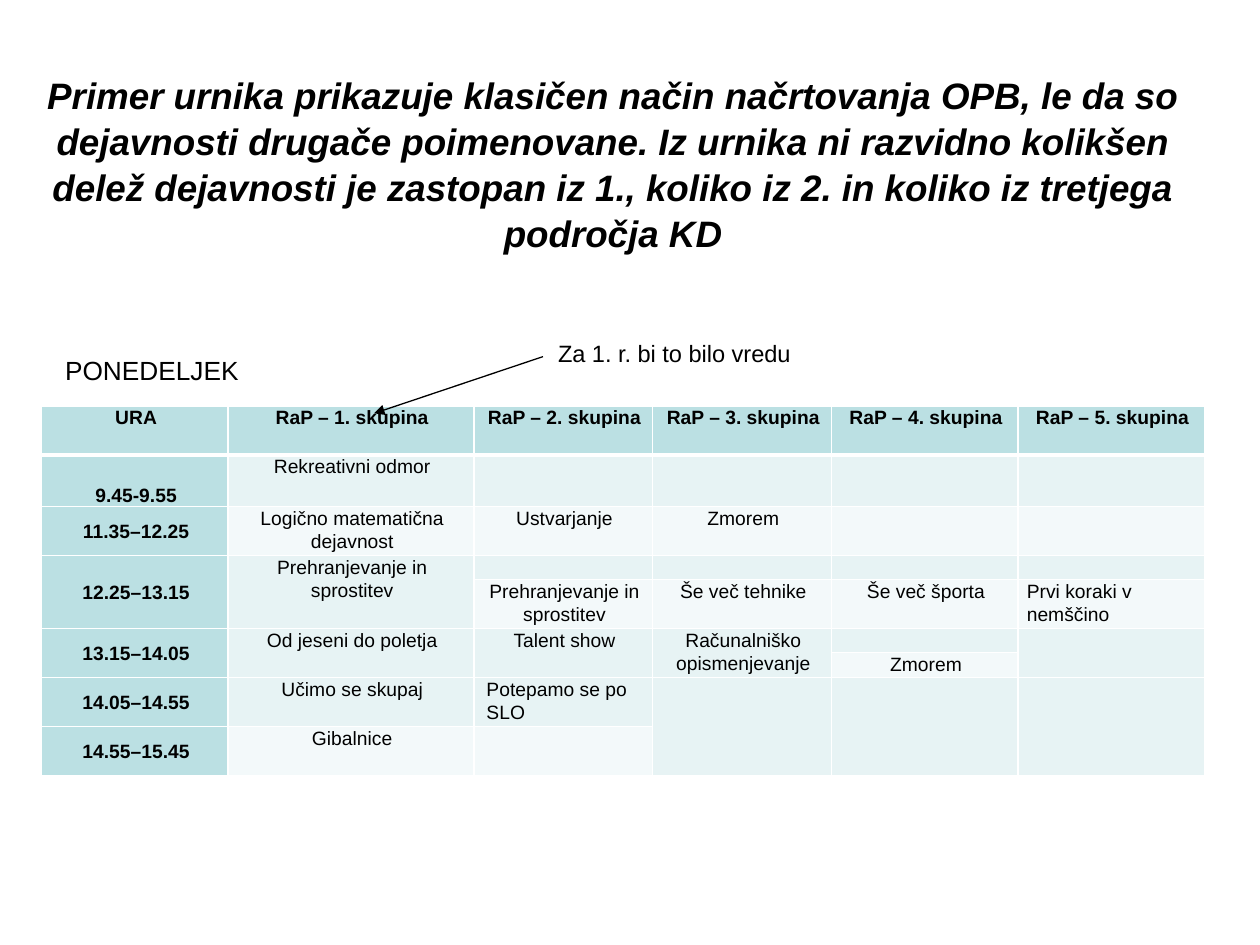
from typing import NamedTuple

import pptx
import pptx.dml.color
import pptx.enum.shapes
import pptx.enum.text
import pptx.oxml
import pptx.oxml.ns
import pptx.util
from lxml import etree

Pt = pptx.util.Pt
RGBColor = pptx.dml.color.RGBColor
Align = pptx.enum.text.PP_ALIGN
Anchor = pptx.enum.text.MSO_ANCHOR
qn = pptx.oxml.ns.qn

BLACK = RGBColor(0x00, 0x00, 0x00)
WHITE = RGBColor(0xFF, 0xFF, 0xFF)
HEADER = RGBColor(0xBB, 0xE0, 0xE3)
BANDS = (RGBColor(0xF3, 0xF9, 0xFA), RGBColor(0xE7, 0xF3, 0xF4))

CELL_SIZE = 11
COLUMNS = (106.6, 140.4, 102.2, 102.2, 106.6, 106.6)
ROWS = (28, 29.5, 28, 13.7, 28, 13.7, 14.4, 28, 28)
SCHEDULE = (
    ("URA", *(f"RaP – {n}. skupina" for n in range(1, 6))),
    ("9.45-9.55", "Rekreativni odmor", "", "", "", ""),
    ("11.35–12.25", "Logično matematična dejavnost", "Ustvarjanje", "Zmorem", "", ""),
    ("12.25–13.15", "Prehranjevanje in sprostitev", "", "", "", ""),
    ("", "", "Prehranjevanje in sprostitev", "Še več tehnike", "Še več športa",
     "Prvi koraki v nemščino"),
    ("13.15–14.05", "Od jeseni do poletja", "Talent show",
     "Računalniško opismenjevanje", "", ""),
    ("", "", "", "", "Zmorem", ""),
    ("14.05–14.55", "Učimo se skupaj", "Potepamo se po SLO", "", "", ""),
    ("14.55–15.45", "Gibalnice", "", "", "", ""),
)
# First row of each two-row merge, with the columns it covers
MERGES = {3: (0, 1), 5: (0, 1, 2, 3, 5), 7: (3, 4, 5)}
LEFT_ALIGNED = {(4, 5), (7, 2)}


class Label(NamedTuple):
    text: str
    left: float
    top: float
    width: float
    height: float
    size: float
    align: Align
    margin: float


LABELS = (
    Label("PONEDELJEK", 23.8, 198.7, 126, 23.8, 15, Align.CENTER, 5),
    Label("Za 1. r. bi to bilo vredu", 311.8, 190.1, 155.5, 23.8, 13.5, Align.LEFT, 7.2),
)


def set_all(target, values: dict) -> None:
    for name, value in values.items():
        setattr(target, name, value)


def write(tf, text: str, size: float, align: Align, bold=False, italic=False):
    p = tf.paragraphs[0]
    p.alignment = align
    r = p.add_run()
    r.text = text
    set_all(r.font, {"name": "Arial", "size": Pt(size), "bold": bold, "italic": italic})
    r.font.color.rgb = BLACK
    return p


def add_title(slide) -> None:
    sp = slide.shapes.title
    set_all(sp, {"left": Pt(13.7), "top": Pt(77), "width": Pt(673.2), "height": Pt(54.7)})
    tf = sp.text_frame
    set_all(tf, {"word_wrap": True, "auto_size": pptx.enum.text.MSO_AUTO_SIZE.NONE,
                 "vertical_anchor": Anchor.MIDDLE, "margin_bottom": Pt(26)})
    p = write(tf, "Primer urnika prikazuje klasičen način načrtovanja OPB, le da so "
              "dejavnosti drugače poimenovane. Iz urnika ni razvidno kolikšen delež "
              "dejavnosti je zastopan iz 1., koliko iz 2. in koliko iz tretjega "
              "področja KD", 21, Align.CENTER, bold=True, italic=True)
    p.line_spacing = 1.04


def add_label(slide, label: Label) -> None:
    sp = slide.shapes.add_textbox(Pt(label.left), Pt(label.top),
                                  Pt(label.width), Pt(label.height))
    tf = sp.text_frame
    set_all(tf, {"word_wrap": True, "margin_left": Pt(label.margin),
                 "margin_right": Pt(label.margin),
                 "auto_size": pptx.enum.text.MSO_AUTO_SIZE.SHAPE_TO_FIT_TEXT})
    write(tf, label.text, label.size, label.align)


def set_borders(cell, bottom_width: float) -> None:
    """Add white borders; call before the fill is set, which must follow them."""
    tc_pr = cell._tc.get_or_add_tcPr()
    for tag, width in (("lnL", 1), ("lnR", 1), ("lnT", 1), ("lnB", bottom_width)):
        ln = etree.SubElement(tc_pr, qn(f"a:{tag}"), w=str(Pt(width)))
        fill = etree.SubElement(ln, qn("a:solidFill"))
        etree.SubElement(fill, qn("a:srgbClr"), val=str(WHITE))


def format_cell(cell, row: int, col: int) -> None:
    is_header = row == 0 or col == 0
    set_borders(cell, 3 if row == 0 else 1)
    cell.fill.solid()
    cell.fill.fore_color.rgb = HEADER if is_header else BANDS[row % 2]
    anchor = Anchor.TOP
    if col == 0 and row > 0:
        anchor = Anchor.BOTTOM if row == 1 else Anchor.MIDDLE
    set_all(cell, {"margin_left": Pt(5), "margin_right": Pt(3.6), "margin_top": 0,
                   "margin_bottom": 0, "vertical_anchor": anchor})
    p = cell.text_frame.paragraphs[0]
    p.line_spacing = 1.07
    text = SCHEDULE[row][col]
    if text:
        align = Align.LEFT if (row, col) in LEFT_ALIGNED else Align.CENTER
        write(cell.text_frame, text, CELL_SIZE, align, bold=is_header)
    else:
        # The end mark keeps empty rows as low as the text rows
        etree.SubElement(p._p, qn("a:endParaRPr"), sz=str(CELL_SIZE * 100))
    if (row, col) == (7, 2):
        p._p.get_or_add_pPr().set("marL", str(Pt(2.2)))


def add_schedule(slide) -> None:
    frame = slide.shapes.add_table(len(ROWS), len(COLUMNS), Pt(23.8), Pt(232),
                                   Pt(sum(COLUMNS)), Pt(sum(ROWS)))
    table = frame.table
    set_all(table, {"first_row": False, "horz_banding": False})
    for column, width in zip(table.columns, COLUMNS):
        column.width = Pt(width)
    for row, height in enumerate(ROWS):
        table.rows[row].height = Pt(height)
        for col in range(len(COLUMNS)):
            format_cell(table.cell(row, col), row, col)
    for row, cols in MERGES.items():
        for col in cols:
            table.cell(row, col).merge(table.cell(row + 1, col))


def add_arrow(slide) -> None:
    line = slide.shapes.add_connector(pptx.enum.shapes.MSO_CONNECTOR.STRAIGHT,
                                      Pt(310.3), Pt(203.8), Pt(213.8), Pt(236.2))
    line.line.color.rgb = BLACK
    line.line.width = Pt(0.75)
    etree.SubElement(line.line._get_or_add_ln(), qn("a:tailEnd"), type="triangle")
    etree.SubElement(line._element.spPr, qn("a:effectLst"))


def main() -> None:
    prs = pptx.Presentation()
    set_all(prs, {"slide_width": Pt(720), "slide_height": Pt(540)})
    slide = prs.slides.add_slide(prs.slide_layouts[5])
    add_title(slide)
    add_schedule(slide)
    add_arrow(slide)
    for label in LABELS:
        add_label(slide, label)
    prs.save("out.pptx")


if __name__ == "__main__":
    main()
